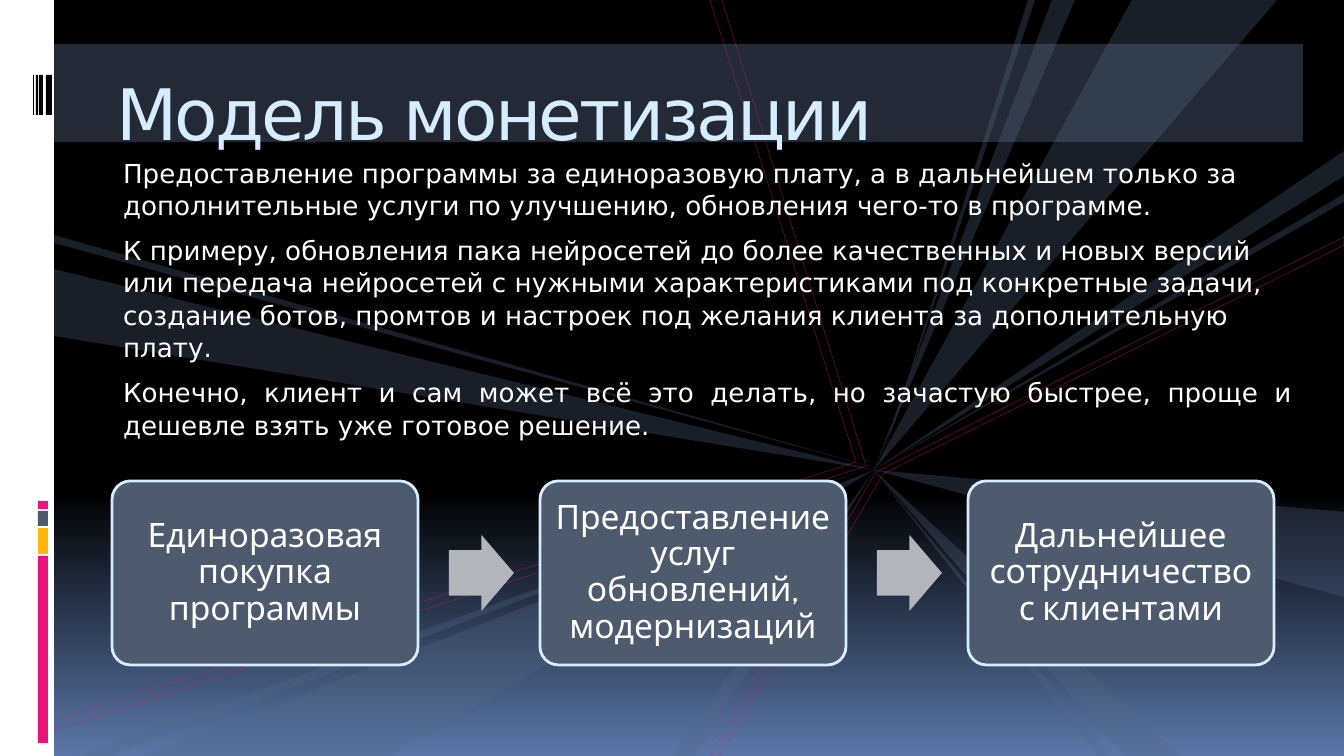
"""Build the monetization model slide with its ray backdrop and three-step flow."""
from lxml.etree import SubElement
from pptx import Presentation
from pptx.dml.color import RGBColor
from pptx.enum.shapes import MSO_SHAPE as Preset
from pptx.enum.text import MSO_ANCHOR as Anchor, PP_ALIGN as Align
from pptx.oxml.ns import qn
from pptx.util import Pt

SCALE = 914400 / 134.4
COLORS = {
    "black": "000000", "white": "FFFFFF", "pink": "EA157A", "yellow": "FEB80A",
    "slate": "4E5B6F", "ray": "566989", "band": "586A86", "ice": "D6ECFF",
    "arrow": "B2B5BB", "horizon": "5B77A8",
}


def paint(shape, fill=None, line=None, width=1, alpha=100):
    shape.shadow.inherit = False
    if fill:
        shape.fill.solid()
        shape.fill.fore_color.rgb = RGBColor.from_string(COLORS[fill])
    else:
        shape.fill.background()
    if line:
        shape.line.color.rgb = RGBColor.from_string(COLORS[line])
        shape.line.width = Pt(width)
    else:
        shape.line.fill.background()
    if alpha < 100:
        for color in list(shape.element.spPr.iter(qn("a:srgbClr"))):
            SubElement(color, qn("a:alpha"), val=str(alpha * 1000))


def write(shape, *texts, size, font, color="white", align=Align.LEFT, anchor=Anchor.TOP,
          margins=(0, 0, 0, 0), line_spacing=1.0, space_before=0, spacing=0):
    frame = shape.text_frame
    frame.word_wrap = True
    frame.vertical_anchor = anchor
    (frame.margin_left, frame.margin_top,
     frame.margin_right, frame.margin_bottom) = [round(value * SCALE) for value in margins]
    for index, text in enumerate(texts):
        paragraph = frame.add_paragraph() if index else frame.paragraphs[0]
        paragraph.alignment = align
        paragraph.line_spacing = line_spacing
        paragraph.space_before = Pt(space_before)
        run = paragraph.add_run()
        run.text = text
        run.font.size = Pt(size)
        run.font.name = font
        run.font.color.rgb = RGBColor.from_string(COLORS[color])
        if spacing:
            run.font._element.set("spc", str(round(spacing * 100)))


presentation = Presentation()
presentation.slide_width = round(1344 * SCALE)
presentation.slide_height = round(756 * SCALE)
slide = presentation.slides.add_slide(presentation.slide_layouts[5])
shapes = slide.shapes

background = slide.background.fill
background.gradient()
background.gradient_angle = 270
for stop, position, color in zip(background.gradient_stops, (0.65, 1), ("black", "horizon")):
    stop.position = position
    stop.color.rgb = RGBColor.from_string(COLORS[color])

side_blocks = [
    (0, 0, 54, 756, "white"),
    (38, 556, 10, 187, "pink"),
    (38, 528, 10, 26, "yellow"),
    (38, 511, 10, 15, "slate"),
    (38, 501, 10, 8, "pink"),
]
barcode = [(33, 1), (36, 2), (39, 4), (46, 6), (55, 4), (60, 4), (66, 2), (70, 2), (74, 5)]
side_blocks += [(left, 75, width, 40, "black") for left, width in barcode]
for *box, color in side_blocks:
    block = shapes.add_shape(Preset.RECTANGLE, *[round(value * SCALE) for value in box])
    paint(block, color)

hub = (874, 470)
outlines = [
    [(710, 756), (876, 472), (1344, 237), (1344, 245), (883, 474), (720, 756)],
    [(55, 720), (55, 730), (866, 466), (722, 0), (710, 0), (856, 462)],
]
rays = [
    [(1035, 0), (882, 460), (1028, 0)],
    [(1132, 0), (1277, 0), hub],
    [(1344, 512), (1344, 597), hub],
    [(1075, 0), (1052, 0), hub],
    [(1124, 756), (1181, 756), hub],
    [(1109, 756), (1098, 756), hub],
    [(1344, 151), (1344, 176), hub],
    [(1344, 194), (1344, 202), hub],
    [(145, 756), (392, 756), hub],
    [(78, 756), (112, 756), (863, 470)],
    [(54, 269), (54, 336), hub],
    [(54, 235), (54, 243), (883, 470)],
    [(672, 756), (695, 756), hub],
]
for points in outlines + rays:
    builder = shapes.build_freeform(*points[0], scale=SCALE)
    builder.add_line_segments(points[1:], close=True)
    ray = builder.convert_to_shape()
    if points in outlines:
        paint(ray, line="pink", width=0.25, alpha=53)
    else:
        paint(ray, "ray", alpha=30)

band = shapes.add_shape(
    Preset.RECTANGLE, *[round(value * SCALE) for value in (54, 44, 1249, 98)])
paint(band, "band", alpha=40)

title = shapes.title
shapes.element.append(title.element)
title.left, title.top, title.width, title.height = [
    round(value * SCALE) for value in (103, 56, 1199, 86)]
write(title, "Модель монетизации", size=38, font="DejaVu Sans", color="ice",
      margins=(13, 14, 13, 0), spacing=-1.5)

body = shapes.add_textbox(*[round(value * SCALE) for value in (103, 149, 1203, 261)])
write(
    body,
    "Предоставление программы за единоразовую плату, а в дальнейшем только за "
    "дополнительные услуги по улучшению, обновления чего-то в программе.",
    "К примеру, обновления пака нейросетей до более качественных и новых версий "
    "или передача нейросетей с нужными характеристиками под конкретные задачи, "
    "создание ботов, промтов и настроек под желания клиента за дополнительную плату.",
    "Конечно, клиент и сам может всё это делать, но зачастую быстрее, проще и "
    "дешевле взять уже готовое решение.",
    size=14, font="DejaVu Sans", margins=(20, 7, 13, 0), line_spacing=1.03, space_before=7)
body.text_frame.paragraphs[-1].alignment = Align.JUSTIFY

steps = [
    "Единоразовая покупка программы",
    "Предоставление услуг обновлений, модернизаций",
    "Дальнейшее сотрудничество с клиентами",
]
step_pitch = 428
for index, text in enumerate(steps):
    offset = index * step_pitch
    step = shapes.add_shape(
        Preset.ROUNDED_RECTANGLE,
        *[round(value * SCALE) for value in (112 + offset, 481, 306, 184)])
    step.adjustments[0] = 0.1
    paint(step, "slate", line="ice", width=1.5)
    write(step, text, size=18, font="Cabin", align=Align.CENTER, anchor=Anchor.MIDDLE,
          margins=(8, 8, 8, 8), line_spacing=0.9)
    if index < len(steps) - 1:
        arrow = shapes.add_shape(
            Preset.RIGHT_ARROW,
            *[round(value * SCALE) for value in (449 + offset, 535, 65, 76)])
        arrow.adjustments[0] = 0.6
        paint(arrow, "arrow")

presentation.save("out.pptx")
